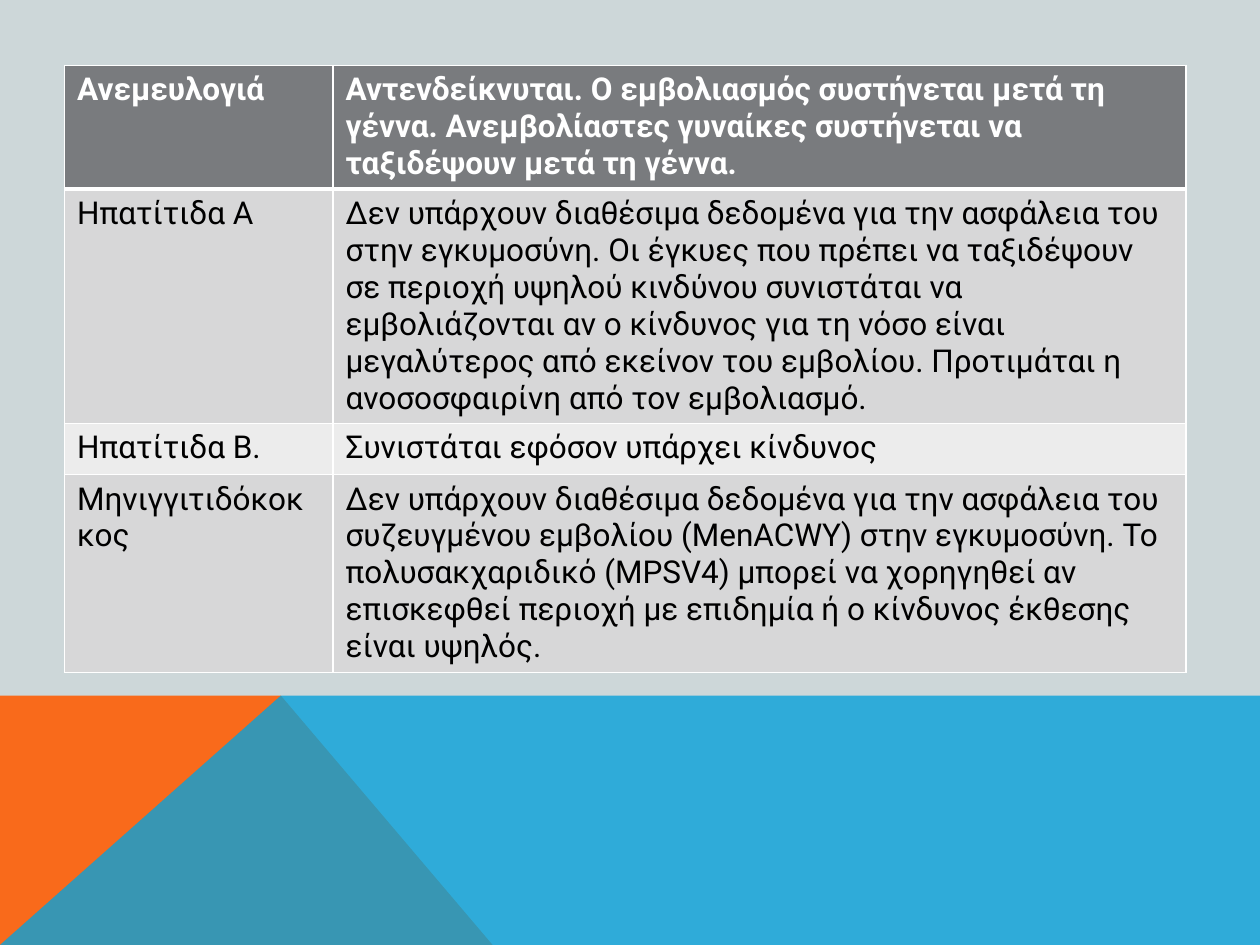
from lxml.etree import SubElement
from pptx import Presentation
from pptx.dml.color import RGBColor
from pptx.oxml.ns import qn
from pptx.util import Pt

WIDTH, HEIGHT = 720, 540
BAND_TOP, PEAK = 397.5, 160.5

ROWS = [
    ("Ανεμευλογιά",
     "Αντενδείκνυται. Ο εμβολιασμός συστήνεται μετά τη γέννα. "
     "Ανεμβολίαστες γυναίκες συστήνεται να ταξιδέψουν μετά τη γέννα."),
    ("Ηπατίτιδα A",
     "Δεν υπάρχουν διαθέσιμα δεδομένα για την ασφάλεια του στην εγκυμοσύνη. "
     "Οι έγκυες που πρέπει να ταξιδέψουν σε περιοχή υψηλού κινδύνου συνιστάται "
     "να εμβολιάζονται αν ο κίνδυνος για τη νόσο είναι μεγαλύτερος από εκείνον "
     "του εμβολίου. Προτιμάται η ανοσοσφαιρίνη από τον εμβολιασμό."),
    ("Ηπατίτιδα B.",
     "Συνιστάται εφόσον υπάρχει κίνδυνος"),
    ("Μηνιγγιτιδόκοκκος",
     "Δεν υπάρχουν διαθέσιμα δεδομένα για την ασφάλεια του συζευγμένου εμβολίου "
     "(MenACWY) στην εγκυμοσύνη. Το πολυσακχαριδικό (MPSV4) μπορεί να χορηγηθεί "
     "αν επισκεφθεί περιοχή με επιδημία ή ο κίνδυνος έκθεσης είναι υψηλός."),
]
COLUMN_WIDTHS = [153.4, 487.4]
ROW_HEIGHTS = [70, 134, 29.2, 113]


def color(hex_string):
    return RGBColor.from_string(hex_string)


def paint(fill, hex_string):
    fill.solid()
    fill.fore_color.rgb = color(hex_string)


class SlideBuilder:
    font_name = "Roboto"
    font_size = 18
    header_fill = "797B7E"
    band_fills = ["ECECEC", "D7D7D8"]
    border_color = "FFFFFF"

    def __init__(self, slide):
        self.slide = slide

    def background(self, hex_string):
        paint(self.slide.background.fill, hex_string)

    def polygon(self, points, hex_string, opacity=100):
        start, *others = [(Pt(x), Pt(y)) for x, y in points]
        builder = self.slide.shapes.build_freeform(*start)
        builder.add_line_segments(others, close=True)
        shape = builder.convert_to_shape()
        shape.shadow.inherit = False
        shape.line.fill.background()
        paint(shape.fill, hex_string)
        if opacity < 100:
            fill_color = shape.fill._xPr.find(qn("a:solidFill"))[0]
            SubElement(fill_color, qn("a:alpha"), val=str(opacity * 1000))

    def border(self, cell, side, width):
        properties = cell._tc.get_or_add_tcPr()
        line = SubElement(properties, qn("a:ln" + side), w=str(Pt(width)))
        solid = SubElement(line, qn("a:solidFill"))
        SubElement(solid, qn("a:srgbClr"), val=self.border_color)

    def cell(self, cell, text, row):
        header = row == 0
        # Borders come before the fill in the cell properties
        for side in "LRTB":
            under_header = (row, side) in [(0, "B"), (1, "T")]
            self.border(cell, side, 3 if under_header else 1)
        paint(cell.fill, self.header_fill if header else self.band_fills[row % 2])
        cell.text = text
        font = cell.text_frame.paragraphs[0].font
        font.name, font.size, font.bold = self.font_name, Pt(self.font_size), header
        font.color.rgb = color("FFFFFF" if header else "000000")

    def table(self, left, top, rows, widths, heights):
        table = self.slide.shapes.add_table(
            len(rows), len(widths), Pt(left), Pt(top),
            Pt(sum(widths)), Pt(sum(heights))).table
        for column, width in zip(table.columns, widths):
            column.width = Pt(width)
        for row, height in zip(table.rows, heights):
            row.height = Pt(height)
        for row, texts in enumerate(rows):
            for column, text in enumerate(texts):
                self.cell(table.cell(row, column), text, row)


def main():
    presentation = Presentation()
    presentation.slide_width, presentation.slide_height = Pt(WIDTH), Pt(HEIGHT)
    builder = SlideBuilder(
        presentation.slides.add_slide(presentation.slide_layouts[6]))

    # Background and overlapping bands at the foot
    builder.background("CDD7D9")
    builder.polygon([(0, HEIGHT), (0, BAND_TOP), (PEAK, BAND_TOP),
                     (281.5, HEIGHT)], "F96A1B")
    builder.polygon([(0, HEIGHT), (PEAK, BAND_TOP), (WIDTH, BAND_TOP),
                     (WIDTH, HEIGHT)], "08A1D9", opacity=80)

    # Vaccination table
    builder.table(36.9, 37.4, ROWS, COLUMN_WIDTHS, ROW_HEIGHTS)

    presentation.save("out.pptx")


if __name__ == "__main__":
    main()
